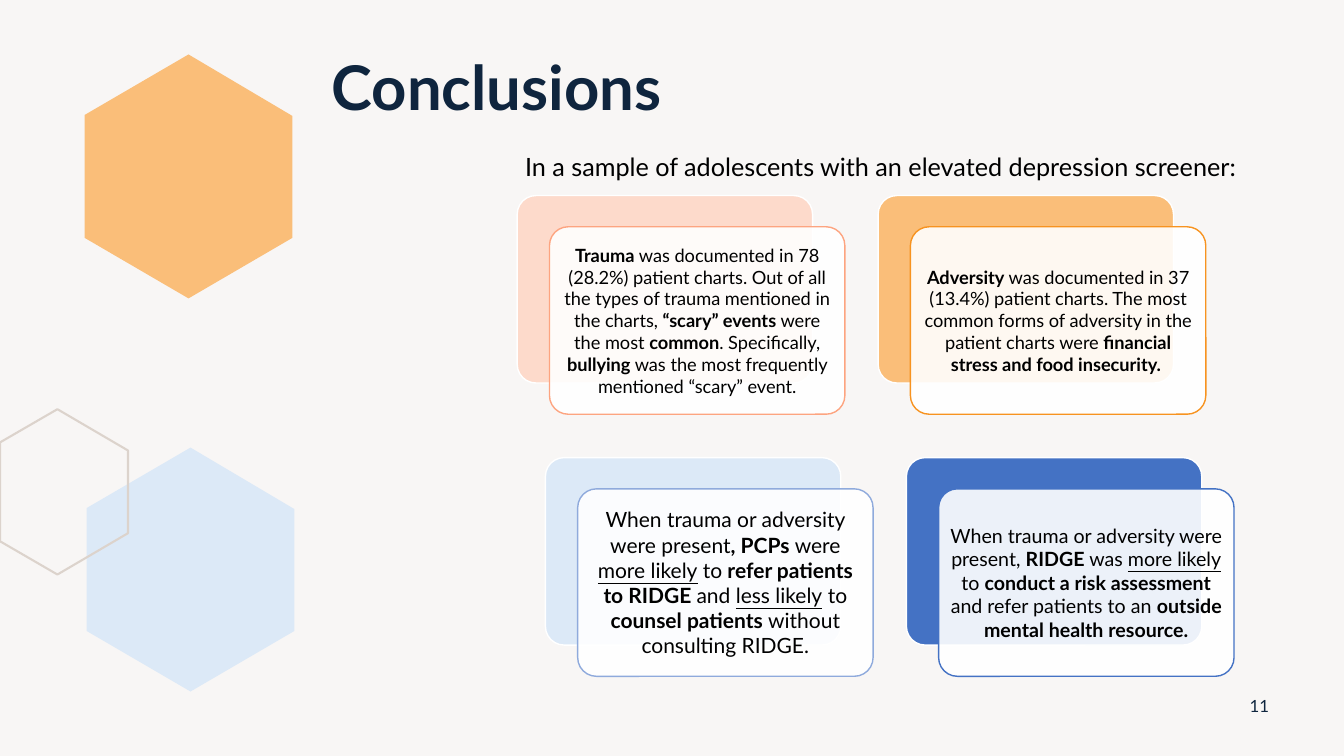
from dataclasses import dataclass

from lxml.etree import SubElement
from pptx import Presentation
from pptx.dml.color import RGBColor
from pptx.enum.shapes import MSO_SHAPE
from pptx.enum.text import MSO_ANCHOR, PP_ALIGN
from pptx.oxml.ns import qn
from pptx.util import Inches, Pt


@dataclass(frozen=True)
class Theme:
    font: str = "Lato"
    paper: str = "F8F6F5"
    navy: str = "0F253E"
    black: str = "000000"
    white: str = "FFFFFF"
    orange: str = "FABE79"
    deep_orange: str = "F79320"
    peach: str = "FDDACB"
    coral: str = "FDA480"
    sky: str = "DCE9F7"
    steel: str = "8FAADC"
    blue: str = "4472C4"
    stone: str = "DCD3CC"
    title_size: int = 44
    intro_size: int = 18
    number_size: int = 12
    small_card_size: int = 13
    medium_card_size: int = 14
    large_card_size: int = 15


theme = Theme()


def paint(shape, fill=None, line=None, width=1):
    shape.shadow.inherit = False
    if fill:
        shape.fill.solid()
        shape.fill.fore_color.rgb = RGBColor.from_string(fill)
    else:
        shape.fill.background()
    if line:
        shape.line.color.rgb = RGBColor.from_string(line)
        shape.line.width = Pt(width)
    else:
        shape.line.fill.background()


def write(para, text, size, color=theme.black, bold=None):
    para.font.name = theme.font
    para.font.size = Pt(size)
    para.font.color.rgb = RGBColor.from_string(color)
    para.font.bold = bold
    for bold_turn, part in enumerate(text.split("*")):
        for underline_turn, words in enumerate(part.split("_")):
            if words:
                span = para.add_run()
                span.text = words
                if bold_turn % 2:
                    span.font.bold = True
                if underline_turn % 2:
                    span.font.underline = True


deck = Presentation()
deck.slide_width = Inches(13.33)
deck.slide_height = Inches(7.5)
page = deck.slides.add_slide(deck.slide_layouts[5])
page.background.fill.solid()
page.background.fill.fore_color.rgb = RGBColor.from_string(theme.paper)

large_hexagon = [(1.03, 0), (0, 0.6), (0, 1.82), (1.03, 2.42), (2.06, 1.82), (2.06, 0.61)]
cut_hexagon = [(0.57, 0), (1.27, 0.41), (1.27, 1.23), (0.57, 1.64), (0, 1.31), (0, 0.33)]
hexagons = [
    (0.84, 0.54, large_hexagon, theme.orange, None),
    (0.86, 4.44, large_hexagon, theme.sky, None),
    (0, 4.06, cut_hexagon, None, theme.stone),
]
for left, top, outline, fill, line in hexagons:
    corners = [(Inches(left + x), Inches(top + y)) for x, y in outline]
    builder = page.shapes.build_freeform(*corners[0])
    builder.add_line_segments(corners[1:], close=True)
    paint(builder.convert_to_shape(), fill, line, 1.5)

title = page.shapes.title
title.left, title.top, title.width, title.height = map(Inches, (3.19, 0.21, 3.87, 1.07))
title.text_frame.vertical_anchor = MSO_ANCHOR.BOTTOM
title_para = title.text_frame.paragraphs[0]
title_para.alignment = PP_ALIGN.LEFT
title_para.line_spacing = 0.9
write(title_para, "Conclusions", theme.title_size, theme.navy, True)

number_box = page.shapes.add_textbox(Inches(12.24), Inches(6.8), Inches(0.5), Inches(0.4))
number_box.text_frame.word_wrap = True
number_box.text_frame.vertical_anchor = MSO_ANCHOR.MIDDLE
number_para = number_box.text_frame.paragraphs[0]
number_para.alignment = PP_ALIGN.CENTER
write(number_para, "11", theme.number_size, theme.navy)

intro_box = page.shapes.add_textbox(Inches(5.11), Inches(1.45), Inches(7.64), Inches(0.4))
intro_box.text_frame.word_wrap = True
write(
    intro_box.text_frame.paragraphs[0],
    "In a sample of adolescents with an elevated depression screener:",
    theme.intro_size,
)

cards = [
    (theme.peach, theme.coral, theme.small_card_size,
     "*Trauma* was documented in 78 (28.2%) patient charts. Out of all the types of trauma "
     "mentioned in the charts, *“scary” events *were the most *common*. Specifically, "
     "*bullying* was the most frequently mentioned “scary” event."),
    (theme.orange, theme.deep_orange, theme.small_card_size,
     "*Adversity* was documented in 37 (13.4%) patient charts. The most common forms of "
     "adversity in the patient charts were *financial stress and food insecurity. *"),
    (theme.sky, theme.steel, theme.large_card_size,
     "When trauma or adversity were present*, PCPs *were _more likely_ to* refer patients "
     "to RIDGE *and _less likely_ to* counsel patients *without consulting RIDGE."),
    (theme.blue, theme.blue, theme.medium_card_size,
     "When trauma or adversity were present, *RIDGE* was _more likely_ to *conduct a risk "
     "assessment *and refer patients to an *outside mental health resource.*"),
]
card_width, card_height = 2.93, 1.86
card_step, front_shift_x, front_shift_y = 3.58, 0.32, 0.31
row_starts = [(5.13, 1.94), (5.41, 4.54)]
for index, (back_fill, front_line, size, text) in enumerate(cards):
    row, column = divmod(index, 2)
    left = row_starts[row][0] + column * card_step
    top = row_starts[row][1]
    back, front = [
        page.shapes.add_shape(
            MSO_SHAPE.ROUNDED_RECTANGLE,
            Inches(left + layer * front_shift_x), Inches(top + layer * front_shift_y),
            Inches(card_width), Inches(card_height),
        )
        for layer in range(2)
    ]
    back.adjustments[0] = front.adjustments[0] = 0.1
    paint(back, back_fill, theme.white)
    paint(front, theme.white, front_line)
    front_color = front._element.spPr.find(qn("a:solidFill")).find(qn("a:srgbClr"))
    SubElement(front_color, qn("a:alpha")).set("val", "90000")

    frame = front.text_frame
    frame.word_wrap = True
    frame.vertical_anchor = MSO_ANCHOR.MIDDLE
    inset = Inches(0.05)
    frame.margin_left = frame.margin_right = frame.margin_top = frame.margin_bottom = inset
    para = frame.paragraphs[0]
    para.alignment = PP_ALIGN.CENTER
    write(para, text, size)

deck.save("out.pptx")
